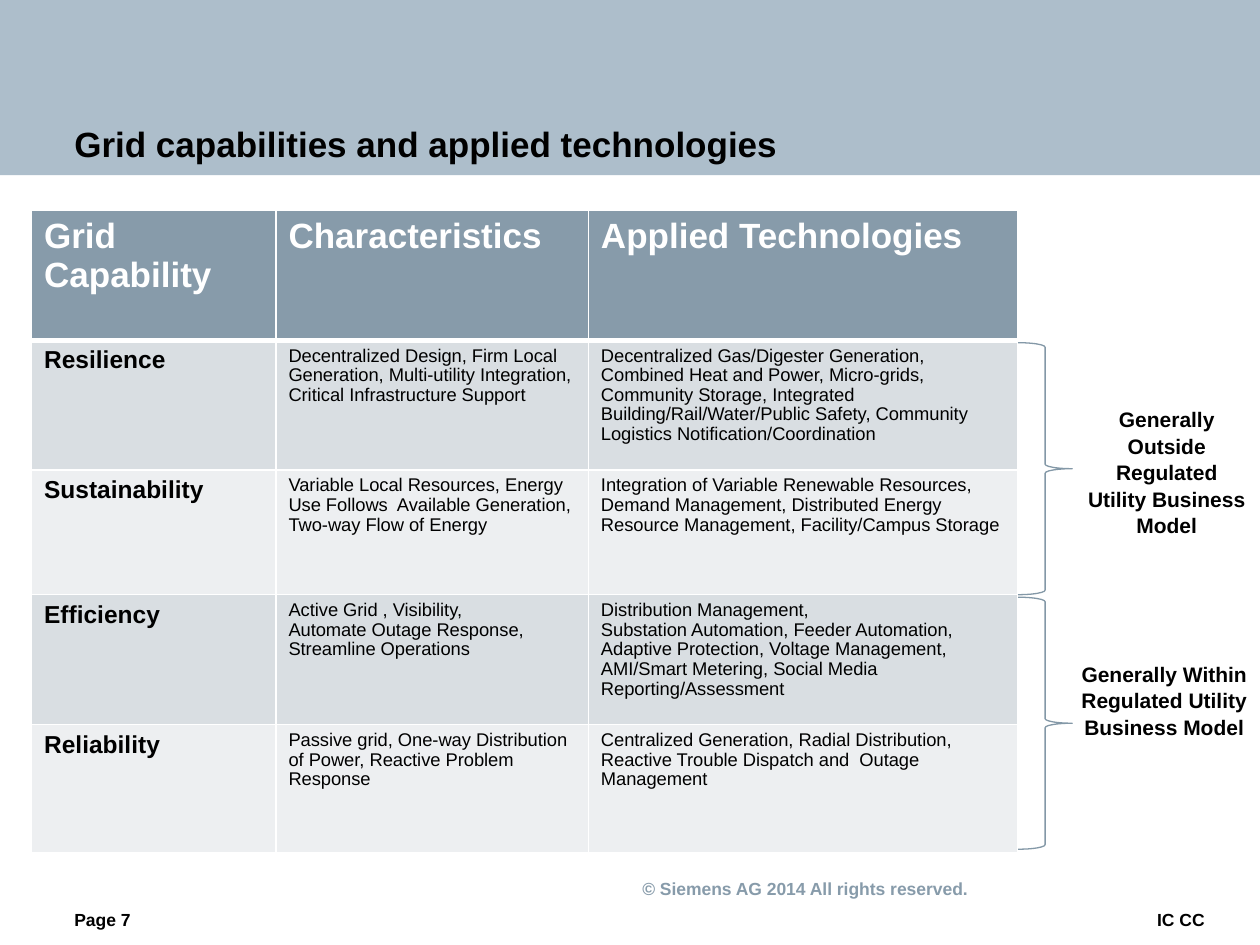
from collections import namedtuple

from lxml.etree import SubElement
from pptx import Presentation
from pptx.dml.color import RGBColor
from pptx.enum.shapes import MSO_SHAPE
from pptx.enum.text import MSO_ANCHOR, PP_ALIGN
from pptx.oxml.ns import qn
from pptx.util import Inches, Pt

COLORS = {
    "band": "ADBECB", "header": "879BAA", "dark_row": "D9DEE2",
    "light_row": "EDEFF1", "brace": "8398A7", "white": "FFFFFF", "black": "000000",
}
FONT = "Arial"
# The slide is a grid of 100 columns by 75 rows of square units.
COLUMNS, ROWS = 100, 75
UNIT = Inches(10) / COLUMNS
Box = namedtuple("Box", "left top width height")

HEADINGS = ["Grid Capability", "Characteristics", "Applied Technologies"]
CAPABILITIES = [
    ("Resilience",
     "Decentralized Design, Firm Local Generation, Multi-utility Integration, "
     "Critical Infrastructure Support",
     "Decentralized Gas/Digester Generation, Combined Heat and Power, Micro-grids, "
     "Community Storage, Integrated Building/Rail/Water/Public Safety, "
     "Community Logistics Notification/Coordination"),
    ("Sustainability",
     "Variable Local Resources, Energy Use Follows  Available Generation, "
     "Two-way Flow of Energy",
     "Integration of Variable Renewable Resources, Demand Management, "
     "Distributed Energy Resource Management, Facility/Campus Storage"),
    ("Efficiency",
     "Active Grid , Visibility,\nAutomate Outage Response,\nStreamline Operations",
     "Distribution Management,\nSubstation Automation, Feeder Automation, "
     "Adaptive Protection, Voltage Management, AMI/Smart Metering, "
     "Social Media Reporting/Assessment"),
    ("Reliability",
     "Passive grid, One-way Distribution of Power, Reactive Problem Response",
     "Centralized Generation, Radial Distribution, Reactive Trouble Dispatch "
     "and  Outage Management"),
]
COLUMN_WIDTHS = [19.4, 24.8, 34.1]
ROW_HEIGHTS = [10.3, 10.3, 9.9, 10.3, 10.2]
BUSINESS_MODELS = [
    ("Generally Outside Regulated Utility Business Model", 14.8),
    ("Generally Within Regulated Utility Business Model", 15.2),
]


def units(*values):
    return [round(value * UNIT) for value in values]


def color(name):
    return RGBColor.from_string(COLORS[name])


def write_text(frame, text, size=10, fill="black", bold=True,
               align=PP_ALIGN.LEFT, spacing=None):
    """Write one paragraph for each line of text."""
    frame.word_wrap = True
    for index, line in enumerate(text.split("\n")):
        paragraph = frame.add_paragraph() if index else frame.paragraphs[0]
        paragraph.alignment = align
        if spacing:
            paragraph.line_spacing = spacing
        run = paragraph.add_run()
        run.text = line
        run.font.name = FONT
        run.font.size = Pt(size)
        run.font.bold = bold
        run.font.color.rgb = color(fill)


def add_text(slide, box, text, insets=(0, 0, 0, 0), anchor=MSO_ANCHOR.BOTTOM, **style):
    """Add a text box; insets run left, top, right, bottom in units."""
    frame = slide.shapes.add_textbox(*units(*box)).text_frame
    (frame.margin_left, frame.margin_top,
     frame.margin_right, frame.margin_bottom) = units(*insets)
    frame.vertical_anchor = anchor
    write_text(frame, text, **style)


def add_title_band(slide, box):
    band = slide.shapes.add_shape(MSO_SHAPE.RECTANGLE, *units(*box))
    band.shadow.inherit = False
    band.fill.solid()
    band.fill.fore_color.rgb = color("band")
    band.line.fill.background()
    add_text(slide, box, "Grid capabilities and applied technologies",
             insets=(5.9, 4.3, 23.2, 2.6), size=20)


def add_footer(slide, box):
    add_text(slide, Box(box.left, box.top, box.width, 4.7),
             "© Siemens AG 2014 All rights reserved.", insets=(5.9, 1.6, 23.2, 0),
             anchor=MSO_ANCHOR.MIDDLE, fill="header", align=PP_ALIGN.RIGHT)
    line_top = box.top + 4.8
    add_text(slide, Box(box.left + 29.5, line_top, 66.1, 1.6), "IC CC",
             align=PP_ALIGN.RIGHT)
    add_text(slide, Box(box.left + 5.9, line_top, 7.9, 1.6), "Page 7")


def set_borders(cell, bottom_width):
    """Draw white cell borders, placed ahead of the cell fill."""
    properties = cell._tc.get_or_add_tcPr()
    for index, side in enumerate(("lnL", "lnR", "lnT", "lnB")):
        width = bottom_width if side == "lnB" else 1
        line = SubElement(properties, qn(f"a:{side}"), w=str(Pt(width)))
        fill = SubElement(line, qn("a:solidFill"))
        SubElement(fill, qn("a:srgbClr"), val=COLORS["white"])
        properties.insert(index, line)


def add_capability_table(slide, box):
    table = slide.shapes.add_table(
        len(ROW_HEIGHTS), len(COLUMN_WIDTHS), *units(*box)).table
    for column, width in zip(table.columns, units(*COLUMN_WIDTHS)):
        column.width = width
    for row, height in zip(table.rows, units(*ROW_HEIGHTS)):
        row.height = height
    for row_index, texts in enumerate([HEADINGS, *CAPABILITIES]):
        is_header = row_index == 0
        row_fill = "header" if is_header else ("light_row", "dark_row")[row_index % 2]
        for column_index, text in enumerate(texts):
            if is_header:
                style = dict(size=20, fill="white")
            elif column_index == 0:
                style = dict(size=14)
            else:
                style = dict(size=10.5, bold=False, spacing=0.96)
            cell = table.cell(row_index, column_index)
            cell.fill.solid()
            cell.fill.fore_color.rgb = color(row_fill)
            set_borders(cell, 3 if is_header else 1)
            write_text(cell.text_frame, text, **style)


def add_business_models(slide, box):
    """Stack one brace and its label for each business model."""
    step = box.height / len(BUSINESS_MODELS)
    for index, (text, label_width) in enumerate(BUSINESS_MODELS):
        top = box.top + index * step
        brace = slide.shapes.add_shape(
            MSO_SHAPE.RIGHT_BRACE, *units(box.left, top, 4.3, step - 0.2))
        brace.shadow.inherit = False
        brace.fill.background()
        brace.line.color.rgb = color("brace")
        brace.line.width = Pt(0.75)
        label_left = box.left + box.width - label_width
        add_text(slide, Box(label_left, top + 4.5, label_width, 11.1), text,
                 insets=(1, 0.5, 1, 0.5), anchor=MSO_ANCHOR.TOP, size=12,
                 align=PP_ALIGN.CENTER, spacing=1.05)


def main():
    presentation = Presentation()
    presentation.slide_width, presentation.slide_height = units(COLUMNS, ROWS)
    slide = presentation.slides.add_slide(presentation.slide_layouts[6])
    add_title_band(slide, Box(0, 0, COLUMNS, 13.9))
    add_footer(slide, Box(0, 67.4, COLUMNS, 7.6))
    add_capability_table(
        slide, Box(2.5, 16.7, sum(COLUMN_WIDTHS), sum(ROW_HEIGHTS)))
    add_business_models(slide, Box(80.8, 27.2, 19.2, 40.4))
    presentation.save("out.pptx")


if __name__ == "__main__":
    main()
